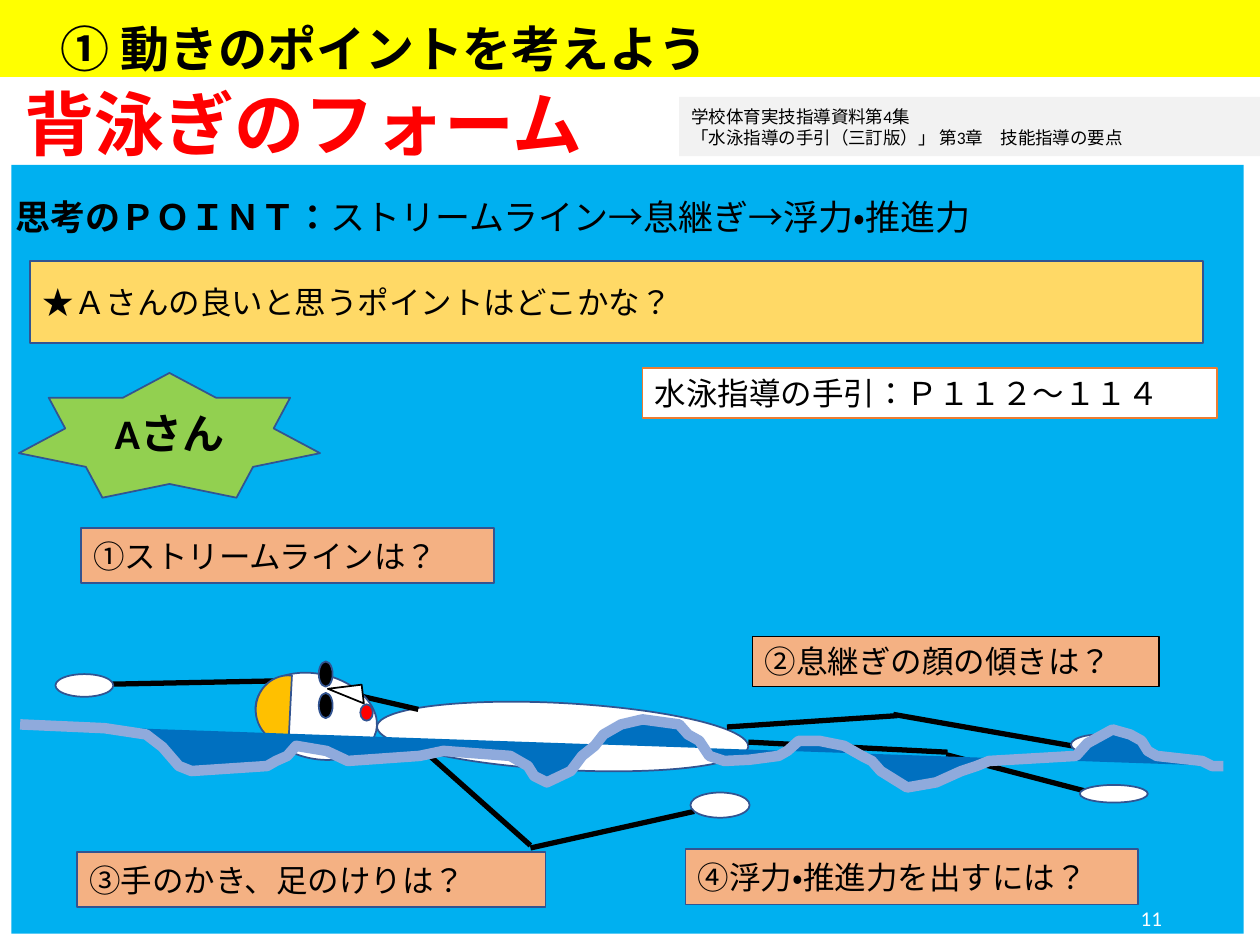
from dataclasses import dataclass
from typing import Optional

from lxml.etree import SubElement
from pptx import Presentation
from pptx.dml.color import RGBColor
from pptx.enum.lang import MSO_LANGUAGE_ID as Lang
from pptx.enum.shapes import MSO_CONNECTOR, MSO_SHAPE as Geo
from pptx.enum.text import MSO_ANCHOR as Anchor, MSO_AUTO_SIZE as Fit, PP_ALIGN as Align
from pptx.oxml.ns import qn
from pptx.util import Inches, Pt


@dataclass(frozen=True)
class Theme:
    """Colours, fonts and type sizes of the slide."""
    black: str = "000000"
    white: str = "FFFFFF"
    red: str = "FF0000"
    water: str = "00B0F0"
    deep: str = "0070C0"
    foam: str = "8FAADC"
    band: str = "FFFF00"
    label: str = "F4B183"
    question: str = "FFD966"
    star: str = "92D050"
    cap: str = "FFC000"
    grey: str = "F2F2F2"
    orange: str = "ED7D31"
    outline: str = "325491"
    sans: str = "Arial"
    body: str = "Calibri"
    heading: int = 40
    title: int = 28
    name: int = 24
    point: int = 20
    text: int = 18
    number: int = 12
    source: int = 10


T = Theme()
Box = tuple[float, float, float, float]


@dataclass(frozen=True)
class Figure:
    """A preset shape without text."""
    box: Box
    fill: str = T.white
    line: Optional[str] = T.outline
    geo: Geo = Geo.OVAL
    rot: float = 0


@dataclass(frozen=True)
class Label:
    """A filled box with text."""
    text: str
    box: Box
    fill: str = T.label
    line: Optional[str] = T.outline
    width: float = 1
    size: int = T.text
    font: str = T.body
    color: str = T.black
    bold: bool = False
    geo: Geo = Geo.RECTANGLE
    align: Align = Align.LEFT
    anchor: Anchor = Anchor.MIDDLE


BACKDROP = [
    Figure((0.09, 1.31, 9.78, 6.1), T.water, None, Geo.RECTANGLE),
    Figure((-0.02, 0, 10.02, 0.61), T.band, None, Geo.RECTANGLE),
]
SHIN = (8.51, 5.92, 7.09, 5.67)
TORSO = Figure((2.99, 5.58, 2.95, 0.53), rot=183.1)
LIMBS = [
    (7.52, 5.97, 5.94, 5.89), (8.62, 6.28, 7.51, 5.99), (7.12, 5.68, 5.77, 5.77),
    (3.32, 5.63, 2.28, 5.39), (4.21, 6.73, 5.51, 6.44), (2.39, 5.4, 0.88, 5.43),
    (3.4, 5.99, 4.21, 6.71),
]
HEAD = Figure((2.02, 5.35, 0.98, 0.67), rot=194.2)
NOSE = Figure((2.67, 5.39, 0.15, 0.27), line=T.black, geo=Geo.RIGHT_TRIANGLE, rot=83.1)
FACE = [
    Figure((2.86, 5.59, 0.1, 0.13), T.red),
    Figure((2.53, 5.25, 0.11, 0.2), T.black),
    Figure((2.53, 5.5, 0.11, 0.2), T.black),
]
CAP = Figure((2.03, 5.36, 0.51, 0.54), T.cap, geo=Geo.CHORD, rot=6.9)
HANDS_AND_FEET = [
    Figure((8.5, 5.83, 0.45, 0.16)),
    Figure((8.57, 6.23, 0.54, 0.14)),
    Figure((5.48, 6.29, 0.47, 0.2)),
    Figure((0.44, 5.35, 0.46, 0.18)),
]
BREATH = Label("②息継ぎの顔の傾きは？", (5.97, 5.05, 3.23, 0.4), line=T.black, width=0.75,
               font=T.sans, anchor=Anchor.TOP)
HEADING = Label("背泳ぎのフォーム", (0.1, 0.65, 5.4, 0.64), T.white, None,
                size=T.heading, font=T.sans, color=T.red, bold=True)
LABELS = [
    Label("①ストリームラインは？", (0.64, 4.19, 3.28, 0.44)),
    Label("★Ａさんの良いと思うポイントはどこかな？", (0.24, 2.07, 9.31, 0.65),
          T.question, font=T.sans),
    Label("Aさん", (0.15, 2.96, 2.39, 0.99), T.star, size=T.name, bold=True,
          geo=Geo.STAR_7_POINT, align=Align.CENTER),
    Label("④浮力・推進力を出すには？", (5.44, 6.74, 3.59, 0.44)),
    Label("水泳指導の手引：Ｐ１１２～１１４", (5.1, 2.92, 4.56, 0.4), T.white, T.orange,
          anchor=Anchor.TOP),
]
FRONT_LABELS = [
    Label("③手のかき、足のけりは？", (0.61, 6.76, 3.72, 0.44)),
    Label("学校体育実技指導資料第4集\n「水泳指導の手引（三訂版）」 第3章　技能指導の要点",
          (5.39, 0.77, 4.61, 0.47), T.grey, None, size=T.source),
]
WAVE = [
    (0.16, 5.75), (0.83, 5.78), (1.16, 5.83), (1.29, 5.93), (1.42, 6.08), (1.52, 6.12),
    (2.12, 6.08), (2.19, 6.04), (2.28, 6), (2.35, 5.92), (2.59, 5.96), (2.76, 6.04),
    (3.33, 6), (3.52, 5.96), (4.05, 6), (4.19, 6.08), (4.24, 6.16), (4.34, 6.21),
    (4.53, 6.12), (4.62, 6), (4.72, 5.92), (4.79, 5.83), (4.93, 5.75), (5.1, 5.71),
    (5.39, 5.75), (5.46, 5.83), (5.55, 5.88), (5.63, 6), (5.75, 6.04), (5.95, 6.03),
    (6.18, 6), (6.25, 5.96), (6.34, 5.88), (6.5, 5.88), (6.7, 5.92), (6.84, 6),
    (6.92, 6.04), (6.99, 6.12), (7.2, 6.25), (7.43, 6.21), (7.63, 6.12), (7.75, 6.08),
    (7.85, 6.04), (8.54, 6), (8.63, 5.9), (8.83, 5.79), (8.97, 5.83), (9.06, 5.88),
    (9.11, 5.96), (9.18, 6), (9.54, 6.04), (9.62, 6.08), (9.71, 6.08),
]


def inches(values) -> list:
    """Turn plain numbers into lengths."""
    return [Inches(v) for v in values]


def add_run(p, text: str, *, size: int, font: str = T.body, color: str = T.black,
            bold: bool = False) -> None:
    """Add a formatted run to a paragraph."""
    r = p.add_run()
    r.text = text
    f = r.font
    f.size, f.name, f.bold, f.language_id = Pt(size), font, bold, Lang.JAPANESE
    f.color.rgb = RGBColor.from_string(color)


def write(tf, text: str, *, align: Align = Align.LEFT, anchor: Anchor = Anchor.MIDDLE,
          **fmt) -> None:
    """Fill a text frame, one paragraph for each line."""
    tf.word_wrap, tf.auto_size, tf.vertical_anchor = True, Fit.NONE, anchor
    for i, line in enumerate(text.split("\n")):
        p = tf.add_paragraph() if i else tf.paragraphs[0]
        p.alignment, p.space_before = align, Pt(0)
        add_run(p, line, **fmt)


def paint(sp, fill: str, line: Optional[str], width: float = 1) -> None:
    """Set the fill and outline of a shape and drop its shadow."""
    sp.shadow.inherit = False
    sp.fill.solid()
    sp.fill.fore_color.rgb = RGBColor.from_string(fill)
    if line:
        sp.line.color.rgb = RGBColor.from_string(line)
        sp.line.width = Pt(width)
    else:
        sp.line.fill.background()


def add_figure(shapes, fig: Figure):
    """Draw a preset shape."""
    sp = shapes.add_shape(fig.geo, *inches(fig.box))
    sp.rotation = fig.rot
    paint(sp, fig.fill, fig.line)
    return sp


def add_label(shapes, lab: Label) -> None:
    """Draw a box with text."""
    sp = shapes.add_shape(lab.geo, *inches(lab.box))
    paint(sp, lab.fill, lab.line, lab.width)
    write(sp.text_frame, lab.text, align=lab.align, anchor=lab.anchor, size=lab.size,
          font=lab.font, color=lab.color, bold=lab.bold)


def add_limb(shapes, ends: Box) -> None:
    """Draw one thick line of an arm or a leg."""
    c = shapes.add_connector(MSO_CONNECTOR.STRAIGHT, *inches(ends))
    c.line.color.rgb = RGBColor.from_string(T.black)
    c.line.width = Pt(3)
    SubElement(c._element.spPr, qn("a:effectLst"))


def add_wave(shapes) -> None:
    """Draw the water surface over the swimmer."""
    start, *rest = [tuple(inches(pt)) for pt in WAVE]
    fb = shapes.build_freeform(*start)
    fb.add_line_segments(rest, close=False)
    paint(fb.convert_to_shape(), T.deep, T.foam, 6)


def add_swimmer(shapes) -> None:
    """Draw the torso, limbs and head as one group."""
    group = shapes.add_group_shape().shapes
    add_limb(group, SHIN)
    add_figure(group, TORSO)
    for ends in LIMBS:
        add_limb(group, ends)
    add_figure(group, HEAD)
    add_figure(group, NOSE)._element.spPr.xfrm.set("flipV", "1")


def add_details(shapes) -> None:
    """Draw the face, cap, hands and feet."""
    for fig in FACE:
        add_figure(shapes, fig)
    cap = add_figure(shapes, CAP)
    cap.adjustments[0], cap.adjustments[1] = 49.25, 162
    for fig in HANDS_AND_FEET:
        add_figure(shapes, fig)


def place(shapes, sp, box: Box) -> None:
    """Move a placeholder to its box and to the front."""
    sp.left, sp.top, sp.width, sp.height = inches(box)
    shapes._spTree.append(sp._element)


def add_title(shapes, title) -> None:
    """Fill the title over the yellow band."""
    place(shapes, title, (0.38, 0.06, 8.93, 0.64))
    write(title.text_frame, "① 動きのポイントを考えよう", size=T.title, bold=True)


def add_point(shapes, body) -> None:
    """Fill the key point and the page number."""
    place(shapes, body, (0.1, 1.5, 8.06, 0.67))
    tf = body.text_frame
    tf.margin_left = tf.margin_right = Inches(0.02)
    write(tf, "思考のＰＯＩＮＴ：", anchor=Anchor.TOP, size=T.point, font=T.sans, bold=True)
    p = tf.paragraphs[0]
    add_run(p, "ストリームライン→息継ぎ→浮力・推進力", size=T.point, font=T.sans)
    pr = p._p.get_or_add_pPr()
    pr.set("marL", "0")
    pr.set("indent", "0")
    SubElement(pr, qn("a:buNone"))
    number = shapes.add_textbox(*inches((7.07, 7.09, 2.25, 0.4)))
    write(number.text_frame, "11", align=Align.RIGHT, size=T.number, color=T.white)


def main() -> None:
    """Build and save the slide."""
    prs = Presentation()
    prs.slide_width, prs.slide_height = Inches(10), Inches(7.5)
    s = prs.slides.add_slide(prs.slide_layouts[1])
    shapes = s.shapes
    title, body = s.placeholders
    for fig in BACKDROP:
        add_figure(shapes, fig)
    add_point(shapes, body)
    add_label(shapes, BREATH)
    add_swimmer(shapes)
    add_label(shapes, HEADING)
    add_details(shapes)
    for lab in LABELS:
        add_label(shapes, lab)
    add_title(shapes, title)
    add_wave(shapes)
    for lab in FRONT_LABELS:
        add_label(shapes, lab)
    prs.save("out.pptx")


if __name__ == "__main__":
    main()
